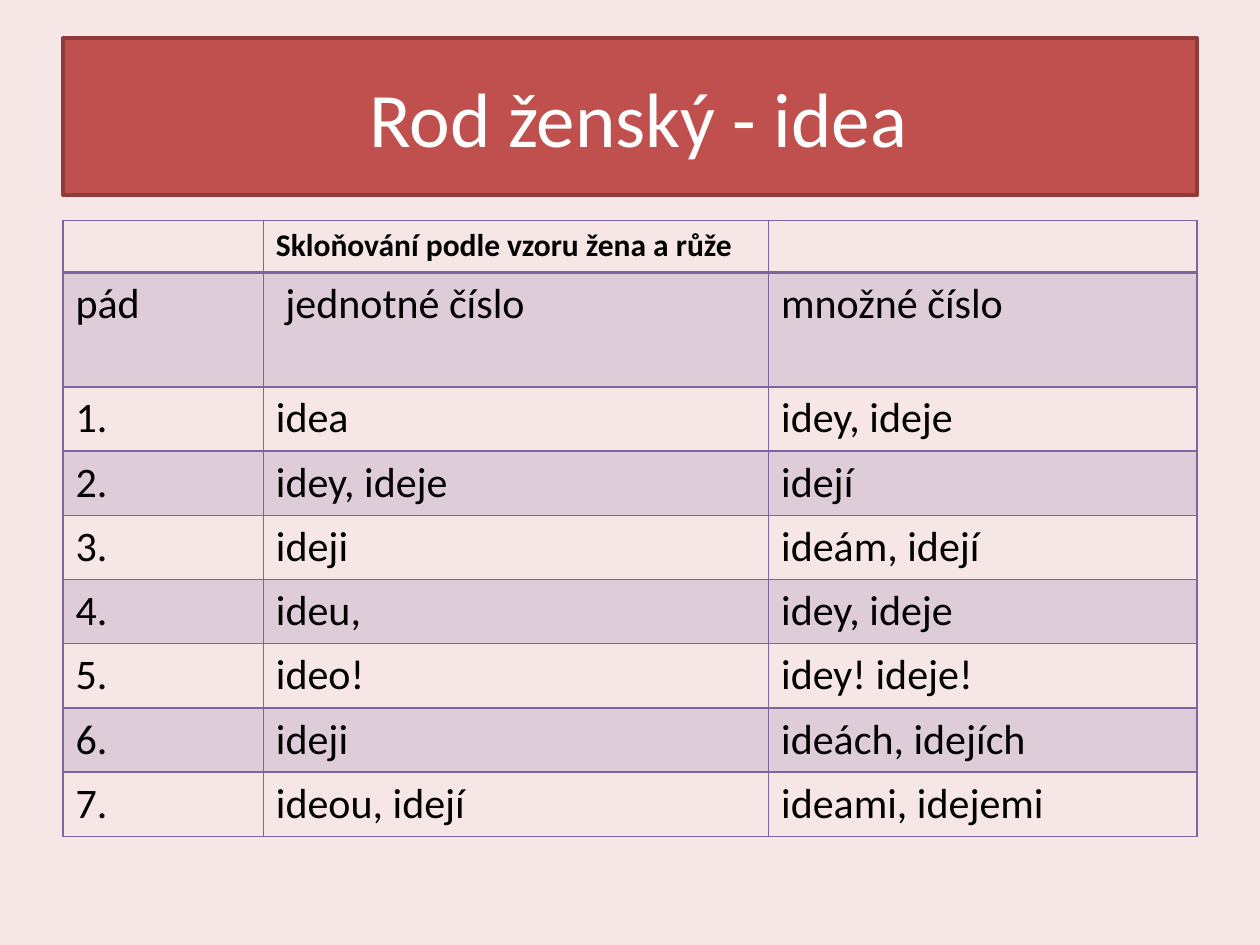
import pptx
import pptx.util
import pptx.dml.color
import pptx.enum.text
import pptx.oxml
import pptx.oxml.ns
import lxml.etree

Inches = pptx.util.Inches
Pt = pptx.util.Pt
PURPLE = "8064A2"
WIDTHS = [1.59, 4.01, 3.4]
HEIGHTS = [0.41, 0.91] + [0.51] * 7
ROWS = [
    ("", "Skloňování podle vzoru žena a růže", ""),
    ("pád", " jednotné číslo", "množné číslo"),
    ("1.", "idea", "idey, ideje"),
    ("2.", "idey, ideje", "idejí"),
    ("3.", "ideji", "ideám, idejí"),
    ("4.", "ideu,", "idey, ideje"),
    ("5.", "ideo!", "idey! ideje!"),
    ("6.", "ideji", "ideách, idejích"),
    ("7.", "ideou, idejí", "ideami, idejemi"),
]
HEAD = {"name": "Calibri", "size": Pt(18), "bold": True}
BODY = {"name": "Calibri", "size": Pt(24), "bold": False}
TITLE = {"name": "Calibri", "size": Pt(44)}


def paint(fill, color):
    """Fill with one solid hex colour."""
    fill.solid()
    fill.fore_color.rgb = pptx.dml.color.RGBColor.from_string(color)


def style(font, form, color):
    """Set font values from a dict, then the colour."""
    for key, value in form.items():
        setattr(font, key, value)
    paint(font.fill, color)


def node(parent, tag, **values):
    """Add a drawing element with attributes."""
    return lxml.etree.SubElement(parent, pptx.oxml.ns.qn(tag), **values)


def edge(cell, sides):
    """Draw cell borders from a dict of side to points."""
    props = cell._tc.get_or_add_tcPr()
    for side, size in sides.items():
        line = node(props, "a:ln" + side, w=str(Pt(size)))
        node(node(line, "a:solidFill"), "a:srgbClr", val=PURPLE)


def tint(cell, color, alpha):
    """Fill a cell with a see-through colour."""
    paint(cell.fill, color)
    for tone in cell._tc.tcPr.findall("./" + pptx.oxml.ns.qn("a:solidFill") + "/*"):
        node(tone, "a:alpha", val=str(alpha * 1000))


def add_title(slide, text):
    """Place and format the title banner."""
    title = slide.shapes.title
    box = {"left": 0.5, "top": 0.3, "width": 9, "height": 1.25}
    for key, value in box.items():
        setattr(title, key, Inches(value))
    paint(title.fill, "C0504D")
    paint(title.line.fill, "8E3B39")
    title.line.width = Pt(2)
    frame = title.text_frame
    frame.text = text
    frame.vertical_anchor = pptx.enum.text.MSO_ANCHOR.MIDDLE
    para = frame.paragraphs[0]
    para.alignment = pptx.enum.text.PP_ALIGN.CENTER
    style(para.runs[0].font, TITLE, "FFFFFF")


def add_grid(slide):
    """Build the table of cases."""
    frame = slide.shapes.add_table(
        len(ROWS), len(WIDTHS), Inches(0.5), Inches(1.75),
        Inches(sum(WIDTHS)), Inches(sum(HEIGHTS)))
    table = frame.table
    for col, width in zip(table.columns, WIDTHS):
        col.width = Inches(width)
    for i, (row, height) in enumerate(zip(table.rows, HEIGHTS)):
        row.height = Inches(height)
        sides = {"L": 1, "R": 1, "T": 2 if i == 1 else 1, "B": 2 if i == 0 else 1}
        for cell, text in zip(row.cells, ROWS[i]):
            cell.text = text
            style(cell.text_frame.paragraphs[0].font, BODY if i else HEAD, "000000")
            for run in cell.text_frame.paragraphs[0].runs:
                style(run.font, BODY if i else HEAD, "000000")
            edge(cell, sides)
            if i % 2:
                tint(cell, PURPLE, 20)
            else:
                cell.fill.background()


def main():
    """Build and save the slide."""
    deck = pptx.Presentation()
    deck.slide_width, deck.slide_height = Inches(10), Inches(7.5)
    slide = deck.slides.add_slide(deck.slide_layouts[5])
    paint(slide.background.fill, "F6E7E6")
    add_title(slide, " Rod ženský - idea")
    add_grid(slide)
    deck.save("out.pptx")


if __name__ == "__main__":
    main()
